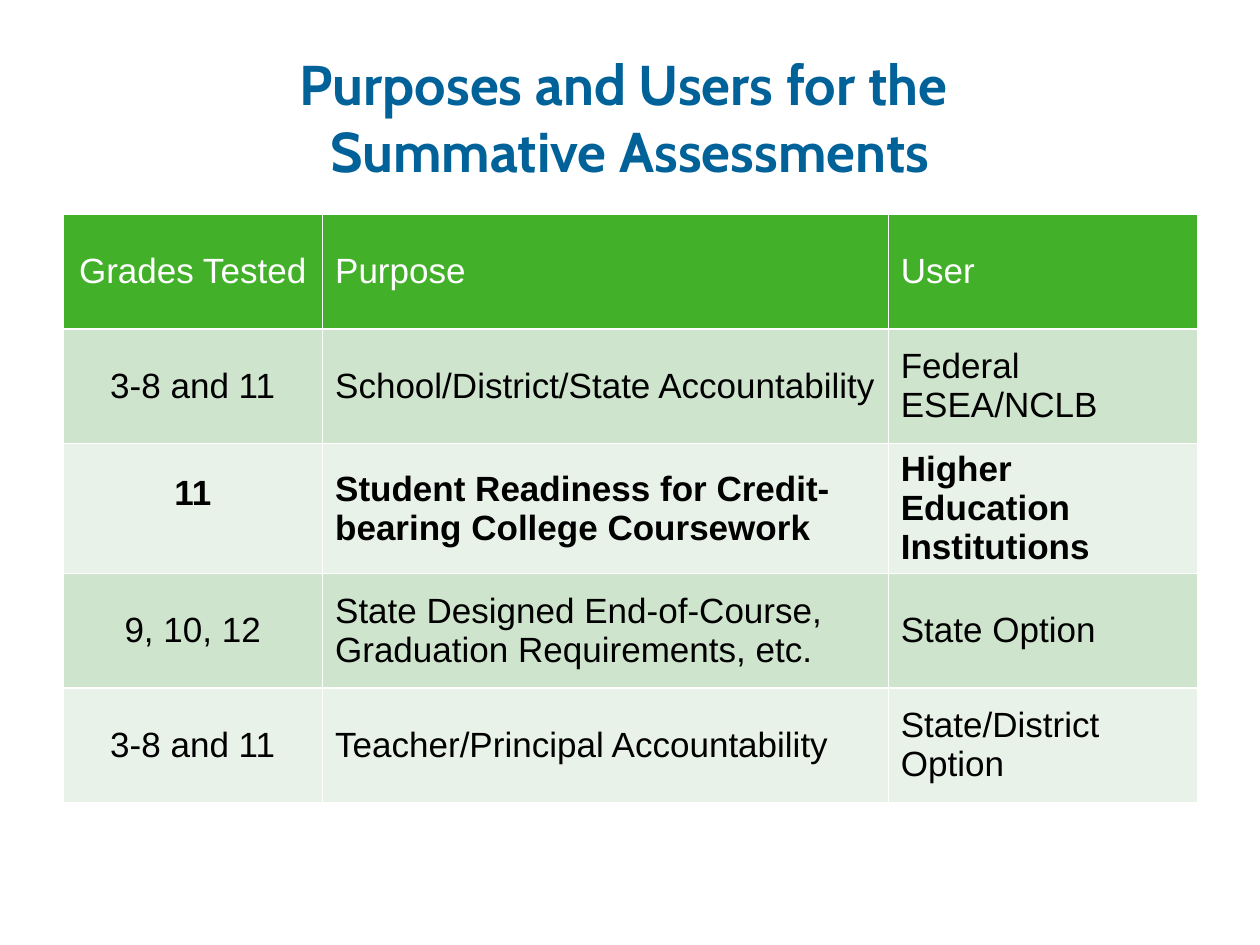
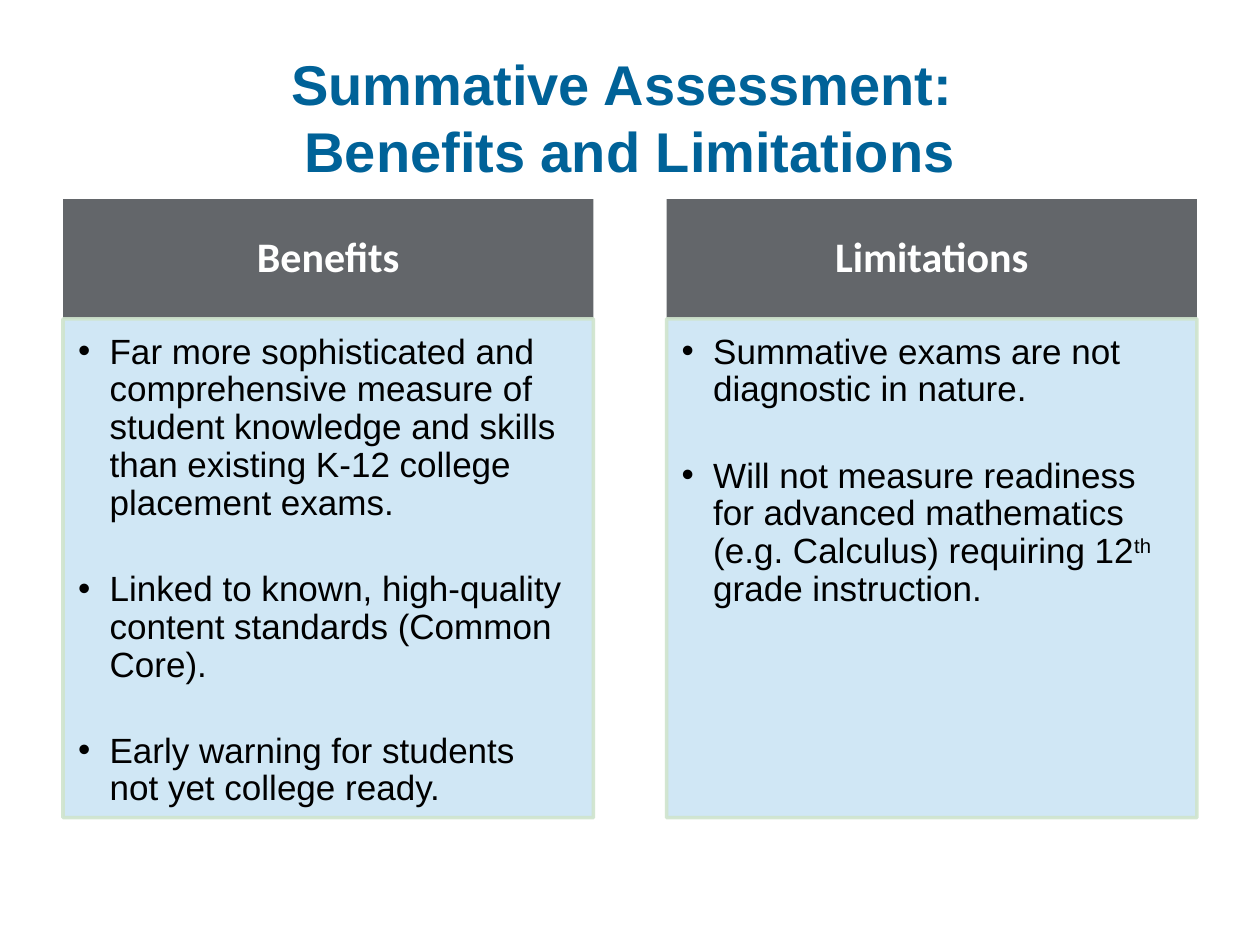
from dataclasses import dataclass
from lxml.etree import SubElement
from pptx import Presentation
from pptx.dml.color import RGBColor
from pptx.enum.text import MSO_ANCHOR, MSO_AUTO_SIZE, PP_ALIGN
from pptx.oxml.ns import qn
from pptx.util import Inches, Pt


@dataclass
class Theme:
    blue: str = "006298"
    green: str = "43B02A"
    mint: str = "CFE4CD"
    pale: str = "E9F2E8"
    gray: str = "63666A"
    sky: str = "CBE5F4"
    white: str = "FFFFFF"
    black: str = "000000"
    sans: str = "Arial"
    cabin: str = "Cabin"
    label: str = "Calibri"
    title: int = 32
    head: int = 24
    body: int = 20


look = Theme()


def add_run(para, text, face, size, color, bold=False):
    run = para.add_run()
    run.text = text
    font = run.font
    font.name, font.size, font.bold = face, Pt(size), bold
    font.color.rgb = RGBColor.from_string(color)
    return run


def set_box(shape, left, top, width, height, anchor, insets):
    shape.left, shape.top = Inches(left), Inches(top)
    shape.width, shape.height = Inches(width), Inches(height)
    frame = shape.text_frame
    frame.word_wrap = True
    frame.auto_size = MSO_AUTO_SIZE.NONE
    frame.vertical_anchor = anchor
    (frame.margin_left, frame.margin_top,
     frame.margin_right, frame.margin_bottom) = map(Inches, insets)
    return frame


deck = Presentation()
deck.slide_width, deck.slide_height = Inches(10), Inches(7.5)

titles = [
    (5, look.cabin, "Purposes and Users for the ", "Summative Assessments"),
    (4, look.sans, "Summative Assessment: ", "Benefits and Limitations"),
]
slides = []
for layout, face, first, second in titles:
    slide = deck.slides.add_slide(deck.slide_layouts[layout])
    frame = set_box(slide.shapes.title, 0.5, 0.3, 9, 1.25,
                    MSO_ANCHOR.MIDDLE, (0.1, 0.05, 0.1, 0.05))
    para = frame.paragraphs[0]
    para.alignment = PP_ALIGN.CENTER
    para.line_spacing = Pt(38.4)
    add_run(para, first, face, look.title, look.blue, True)
    para.add_line_break()
    add_run(para, second, face, look.title, look.blue, True)
    slides.append(slide)
users, limits = slides

rows = [
    ("Grades Tested", "Purpose", "User"),
    ("3-8 and 11", "School/District/State Accountability", "Federal ESEA/NCLB"),
    ("11", "Student Readiness for Credit-bearing College Coursework",
     "Higher Education Institutions"),
    ("9, 10, 12", "State Designed End-of-Course, Graduation Requirements, etc.",
     "State Option"),
    ("3-8 and 11", "Teacher/Principal Accountability", "State/District Option"),
]
strong = 2
table = users.shapes.add_table(len(rows), 3, Inches(0.5), Inches(1.7),
                               Inches(9.01), Inches(4.55)).table
for col, width in zip(table.columns, (2.06, 4.49, 2.46)):
    col.width = Inches(width)
for i, row in enumerate(rows):
    table.rows[i].height = Inches(0.91)
    fill = look.green if i == 0 else look.mint if i % 2 else look.pale
    color = look.black if i else look.white
    for j, text in enumerate(row):
        cell = table.cell(i, j)
        cell.fill.solid()
        cell.fill.fore_color.rgb = RGBColor.from_string(fill)
        cell.vertical_anchor = MSO_ANCHOR.MIDDLE
        para = cell.text_frame.paragraphs[0]
        para.alignment = PP_ALIGN.LEFT if j else PP_ALIGN.CENTER
        add_run(para, text, look.sans, look.body, color, i == strong)
table.cell(strong, 0).margin_bottom = Inches(0.29)

panels = [
    ("Benefits", [
        ["Far more sophisticated and comprehensive measure of student knowledge "
         "and skills than existing K-12 college placement exams."],
        ["Linked to known, high-quality content standards (Common Core)."],
        ["Early warning for students not yet college ready."],
    ]),
    ("Limitations", [
        ["Summative exams are not diagnostic in nature."],
        ["Will not measure readiness for advanced mathematics (e.g. Calculus) "
         "requiring 12", "th", " grade instruction."],
    ]),
]
holders = list(limits.placeholders)[1:]
for k, (name, points) in enumerate(panels):
    head, body = holders[2 * k:2 * k + 2]
    left = 0.5 + 4.79 * k

    frame = set_box(head, left, 1.58, 4.21, 0.95, MSO_ANCHOR.MIDDLE,
                    (0.19, 0.11, 0.19, 0.11))
    head.fill.solid()
    head.fill.fore_color.rgb = RGBColor.from_string(look.gray)
    para = frame.paragraphs[0]
    para.alignment = PP_ALIGN.CENTER
    para.line_spacing, para.space_before = 0.9, Pt(0)
    add_run(para, name, look.label, look.head, look.white, True)

    frame = set_box(body, left, 2.53, 4.21, 3.96, MSO_ANCHOR.TOP,
                    (0.12, 0.12, 0.16, 0.17))
    body.fill.solid()
    body.fill.fore_color.rgb = RGBColor.from_string(look.sky)
    body.line.color.rgb = RGBColor.from_string(look.mint)
    body.line.width = Pt(2)
    for tone in body._element.spPr.iter(qn("a:srgbClr")):
        SubElement(tone, qn("a:alpha"), val="90000")
    for n, parts in enumerate(points):
        para = frame.add_paragraph() if n else frame.paragraphs[0]
        props = para._p.get_or_add_pPr()
        props.set("marL", str(Inches(0.25)))
        props.set("indent", str(Inches(-0.25)))
        SubElement(props, qn("a:buChar"), char="•")
        para.line_spacing = 0.9
        para.space_before = Pt(27.6 if n else 0)
        for text in parts:
            run = add_run(para, text, look.sans, look.body, look.black)
            if text == "th":
                run.font._element.set("baseline", "30000")

deck.save("out.pptx")
